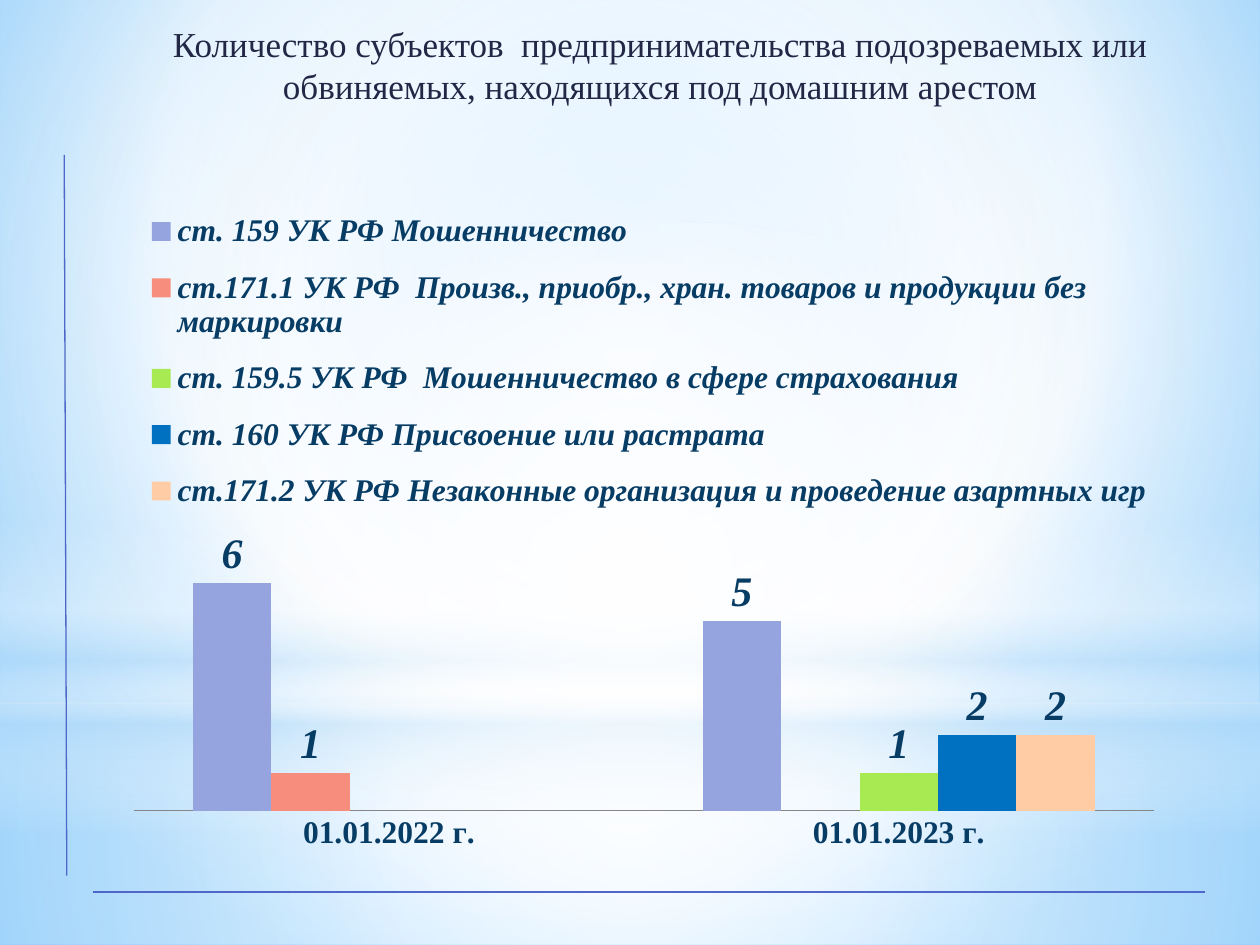
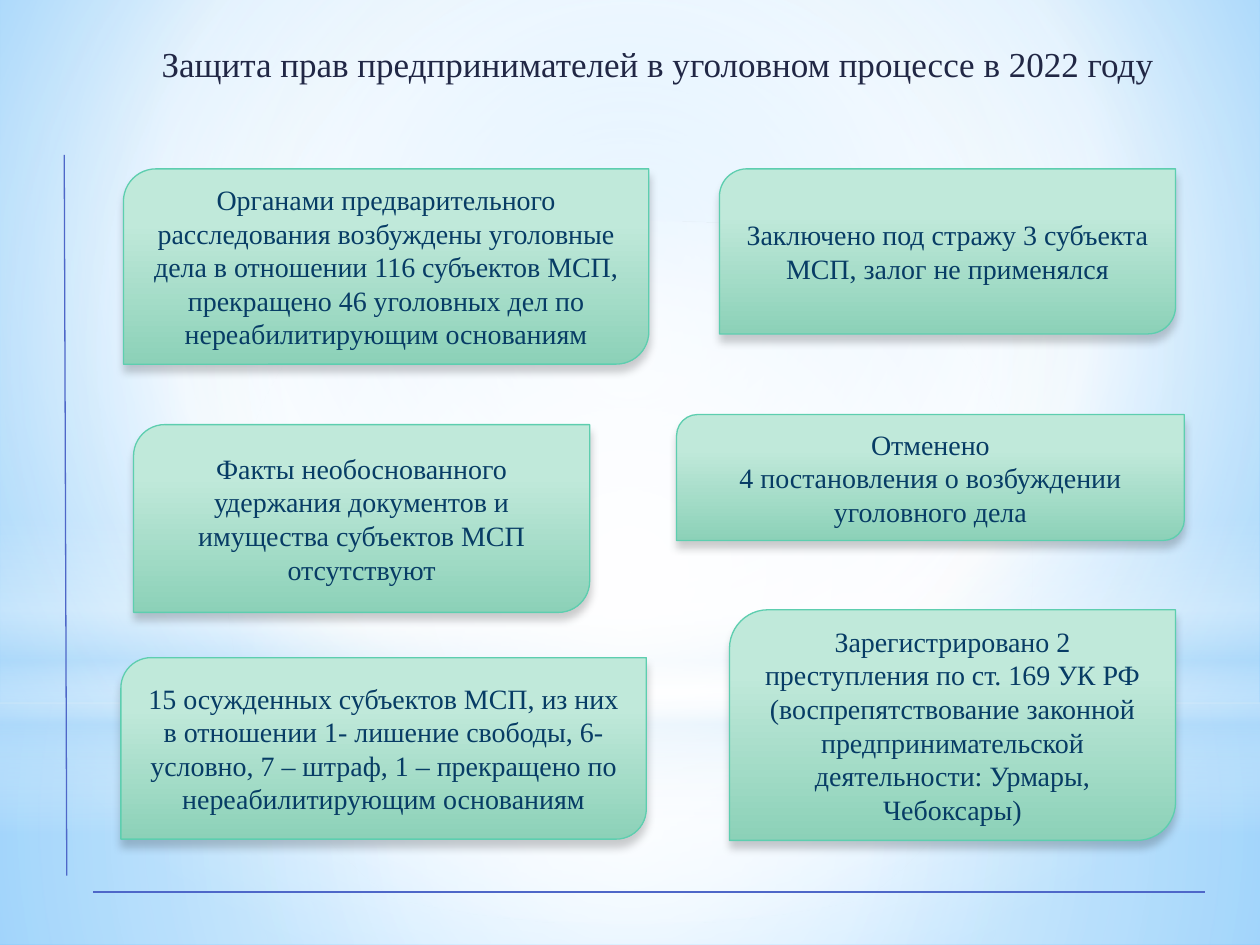
from dataclasses import dataclass
from typing import Optional

from lxml import etree
from pptx import Presentation
from pptx.chart.data import CategoryChartData
from pptx.dml.color import RGBColor
from pptx.enum.chart import XL_CHART_TYPE as ChartType, XL_LABEL_POSITION as LabelPosition
from pptx.enum.chart import XL_LEGEND_POSITION as LegendPosition, XL_TICK_MARK as TickMark
from pptx.enum.shapes import MSO_CONNECTOR as Connector, MSO_SHAPE as Preset
from pptx.enum.text import MSO_ANCHOR as Anchor, MSO_AUTO_SIZE as AutoSize, PP_ALIGN as Align
from pptx.oxml.ns import qn
from pptx.util import Inches, Pt

FONT = "Times New Roman"
COLORS = {
    "title": "212745", "text": "073C65", "rule": "4E67C8", "axis": "868686",
    "white": "FFFFFF", "haze": "B4DCFA", "sky": "9ED5FF", "deep_sky": "5BB9FF",
    "card_light": "C0E9DA", "card_dark": "8CD1B8", "card_line": "5DCEAF", "shadow": "000000",
    "lavender": "95A4DE", "coral": "F78D7C", "lime": "A7EA52", "blue": "0070C0", "peach": "FFCCA6",
}


@dataclass(frozen=True)
class Box:
    left: float
    top: float
    width: float
    height: float

    def lengths(self) -> tuple:
        return tuple(Inches(v) for v in (self.left, self.top, self.width, self.height))


@dataclass(frozen=True)
class Stop:
    position: int
    color: str
    opacity: int = 100


@dataclass(frozen=True)
class Gradient:
    stops: tuple[Stop, ...]
    focus: Optional[tuple[int, int, int, int]] = None  # None: top to bottom


@dataclass(frozen=True)
class Veil:
    preset: int
    box: Box
    gradient: Gradient


@dataclass(frozen=True)
class Card:
    box: Box
    text: str


@dataclass(frozen=True)
class Offence:
    name: str
    counts: tuple
    color: str


CENTER = (50, 50, 50, 50)
BACKGROUND = Gradient(
    (Stop(0, "sky"), Stop(60, "white"), Stop(100, "deep_sky")), (20, 10, 20, 60))
VEILS = (
    Veil(Preset.RECTANGLE, Box(0, 5.58, 10, 1.92), Gradient(
        (Stop(0, "white", 91), Stop(37, "white", 76), Stop(100, "haze", 79)), CENTER)),
    Veil(Preset.RECTANGLE, Box(0, 0, 10, 5.58), Gradient(
        (Stop(0, "white", 89), Stop(48, "white", 62), Stop(100, "haze", 79)), CENTER)),
    Veil(Preset.RECTANGLE, Box(0, 4.12, 10, 2.5), Gradient(
        (Stop(0, "white", 0), Stop(29, "white", 30), Stop(45, "haze", 40),
         Stop(55, "white", 26), Stop(65, "haze", 60), Stop(100, "white", 0)))),
    Veil(Preset.OVAL, Box(0, 1.75, 10, 5.58), Gradient(
        (Stop(0, "white"), Stop(56, "white", 0)), CENTER)),
)
RULES = ((0.74, 7.08, 9.56, 7.08), (0.51, 1.23, 0.53, 6.95))

CARD_FILL = Gradient((Stop(28, "card_light"), Stop(100, "card_dark")))
CARDS = (
    Card(Box(0.98, 1.34, 4.17, 1.55),
         "Органами предварительного расследования возбуждены уголовные дела в отношении "
         "116 субъектов МСП, прекращено 46 уголовных дел по нереабилитирующим основаниям"),
    Card(Box(0.96, 5.22, 4.17, 1.44),
         "15 осужденных субъектов МСП, из них в отношении 1- лишение свободы, 6-условно, "
         "7 – штраф, 1 – прекращено по нереабилитирующим основаниям"),
    Card(Box(5.37, 3.29, 4.03, 1),
         "Отменено\n4 постановления о возбуждении уголовного дела"),
    Card(Box(5.71, 1.34, 3.62, 1.31),
         "Заключено под стражу 3 субъекта МСП, залог не применялся"),
    Card(Box(1.06, 3.37, 3.62, 1.49),
         "Факты необоснованного удержания документов и имущества субъектов МСП отсутствуют"),
    Card(Box(5.79, 4.84, 3.54, 1.83),
         "Зарегистрировано 2 преступления по ст. 169 УК РФ (воспрепятствование законной "
         "предпринимательской деятельности: Урмары, Чебоксары)"),
)

DATES = ("01.01.2022 г.", "01.01.2023 г.")
OFFENCES = (
    Offence("ст. 159 УК РФ Мошенничество", (6, 5), "lavender"),
    Offence("ст.171.1 УК РФ  Произв., приобр., хран. товаров и продукции без маркировки",
            (1, None), "coral"),
    Offence("ст. 159.5 УК РФ  Мошенничество в сфере страхования", (None, 1), "lime"),
    Offence("ст. 160 УК РФ Присвоение или растрата", (None, 2), "blue"),
    Offence("ст.171.2 УК РФ Незаконные организация и проведение азартных игр",
            (None, 2), "peach"),
)


def rgb(name: str) -> RGBColor:
    return RGBColor.from_string(COLORS[name])


def add_node(parent, tag: str, **attributes):
    node = etree.SubElement(parent, qn(tag))
    for key, value in attributes.items():
        node.set(key, str(value))
    return node


def add_color(parent, name: str, opacity: int) -> None:
    color = add_node(parent, "a:srgbClr", val=COLORS[name])
    if opacity < 100:
        add_node(color, "a:alpha", val=opacity * 1000)


def set_gradient(fill, properties, gradient: Gradient) -> None:
    """Replace the fill held by a properties element with a gradient."""
    fill.solid()
    solid = properties.find(qn("a:solidFill"))
    node = etree.Element(qn("a:gradFill"), rotWithShape="1")
    stop_list = add_node(node, "a:gsLst")
    for stop in gradient.stops:
        add_color(add_node(stop_list, "a:gs", pos=stop.position * 1000),
                  stop.color, stop.opacity)
    if gradient.focus:
        circle = add_node(node, "a:path", path="circle")
        sides = {side: value * 1000 for side, value in zip("ltrb", gradient.focus)}
        add_node(circle, "a:fillToRect", **sides)
    else:
        add_node(node, "a:lin", ang=5400000, scaled=0)
    properties.replace(solid, node)


def set_font(font, size: int, color: str, bold: bool = False, italic: bool = False) -> None:
    font.name, font.size = FONT, Pt(size)
    font.bold, font.italic = bold, italic
    font.color.rgb = rgb(color)


# Shared parts
def build_master(master, slide) -> None:
    """Give the master its background and its veils, drawn by way of a slide."""
    fill = master.background.fill
    fill.solid()
    set_gradient(fill, master.element.find(".//" + qn("p:bgPr")), BACKGROUND)
    for index, veil in enumerate(VEILS):
        shape = slide.shapes.add_shape(veil.preset, *veil.box.lengths())
        shape.shadow.inherit = False
        shape.line.fill.background()
        set_gradient(shape.fill, shape.element.spPr, veil.gradient)
        shape.element.find(".//" + qn("p:cNvPr")).set("id", str(100 + index))
        master.shapes.element.insert(2 + index, shape.element)


def add_rules(slide) -> None:
    for ends in RULES:
        rule = slide.shapes.add_connector(Connector.STRAIGHT, *map(Inches, ends))
        rule.line.color.rgb = rgb("rule")
        rule.line.width = Pt(0.75)
        add_node(rule.element.spPr, "a:effectLst")


def set_title(slide, text: str, box: Box) -> None:
    title = slide.shapes.title
    title.left, title.top, title.width, title.height = box.lengths()
    frame = title.text_frame
    frame.text = text
    frame.word_wrap = True
    frame.auto_size = AutoSize.SHAPE_TO_FIT_TEXT
    frame.vertical_anchor = Anchor.TOP
    paragraph = frame.paragraphs[0]
    paragraph.alignment = Align.CENTER
    set_font(paragraph.font, 20, "title")


# Chart of offences
def set_layout(parent, index: int, box: Box, inner: bool = False) -> None:
    """Place a chart part by fractions of the chart's size."""
    for old in parent.findall(qn("c:layout")):
        parent.remove(old)
    layout = etree.Element(qn("c:layout"))
    manual = add_node(layout, "c:manualLayout")
    if inner:
        add_node(manual, "c:layoutTarget", val="inner")
    for tag in ("c:xMode", "c:yMode"):
        add_node(manual, tag, val="edge")
    for tag, value in zip("xywh", (box.left, box.top, box.width, box.height)):
        add_node(manual, "c:" + tag, val=value)
    parent.insert(index, layout)


def add_offence_chart(slide, box: Box) -> None:
    data = CategoryChartData()
    data.categories = DATES
    for offence in OFFENCES:
        data.add_series(offence.name, offence.counts)
    chart = slide.shapes.add_chart(ChartType.COLUMN_CLUSTERED, *box.lengths(), data).chart
    set_font(chart.font, 18, "text")
    chart.has_title = False

    chart.has_legend = True
    legend = chart.legend
    legend.position = LegendPosition.TOP
    legend.include_in_layout = False
    set_font(legend.font, 18, "text", bold=True, italic=True)
    space = chart.element
    set_layout(space.find(".//" + qn("c:legend")), 1, Box(0.01, 0.05, 0.97, 0.47))
    set_layout(space.find(".//" + qn("c:plotArea")), 0, Box(0.01, 0.54, 0.96, 0.37), inner=True)

    category_axis = chart.category_axis
    category_axis.major_tick_mark = TickMark.NONE
    category_axis.format.line.color.rgb = rgb("axis")
    set_font(category_axis.tick_labels.font, 18, "text", bold=True)
    value_axis = chart.value_axis
    value_axis.visible = False
    value_axis.has_major_gridlines = False
    value_axis.minimum_scale, value_axis.maximum_scale = 0, 7

    plot = chart.plots[0]
    plot.gap_width, plot.overlap = 150, 0
    plot.vary_by_categories = False
    for series, offence in zip(plot.series, OFFENCES):
        series.format.fill.solid()
        series.format.fill.fore_color.rgb = rgb(offence.color)
        labels = series.data_labels
        labels.show_value = True
        labels.position = LabelPosition.OUTSIDE_END
        set_font(labels.font, 24, "text", bold=True, italic=True)


# Cards
def add_card(slide, card: Card) -> None:
    shape = slide.shapes.add_shape(Preset.ROUND_2_DIAG_RECTANGLE, *card.box.lengths())
    set_gradient(shape.fill, shape.element.spPr, CARD_FILL)
    shape.line.color.rgb = rgb("card_line")
    shape.line.width = Pt(0.75)
    shape.shadow.inherit = False
    shadow = add_node(shape.element.spPr.find(qn("a:effectLst")), "a:outerShdw",
                      blurRad=Pt(5), dist=Pt(4), dir=5400000, rotWithShape=0)
    add_color(shadow, "shadow", 20)
    frame = shape.text_frame
    frame.text = card.text
    frame.word_wrap = True
    frame.vertical_anchor = Anchor.MIDDLE
    for paragraph in frame.paragraphs:
        paragraph.alignment = Align.CENTER
        set_font(paragraph.font, 16, "text")


def main() -> None:
    presentation = Presentation()
    presentation.slide_width, presentation.slide_height = Inches(10), Inches(7.5)
    title_only = presentation.slide_layouts[5]
    arrest_slide, rights_slide = (presentation.slides.add_slide(title_only) for _ in range(2))
    build_master(presentation.slide_master, arrest_slide)
    for slide in (arrest_slide, rights_slide):
        add_rules(slide)

    # Slide 1: house arrest
    set_title(arrest_slide,
              "Количество субъектов  предпринимательства подозреваемых или обвиняемых, "
              "находящихся под домашним арестом", Box(0.76, 0.13, 8.96, 1.11))
    add_offence_chart(arrest_slide, Box(0.98, 1.24, 8.43, 5.71))

    # Slide 2: protection of rights
    set_title(rights_slide, "Защита прав предпринимателей в уголовном процессе в 2022 году",
              Box(0.74, 0.29, 8.96, 0.44))
    for card in CARDS:
        add_card(rights_slide, card)

    presentation.save("out.pptx")


if __name__ == "__main__":
    main()
